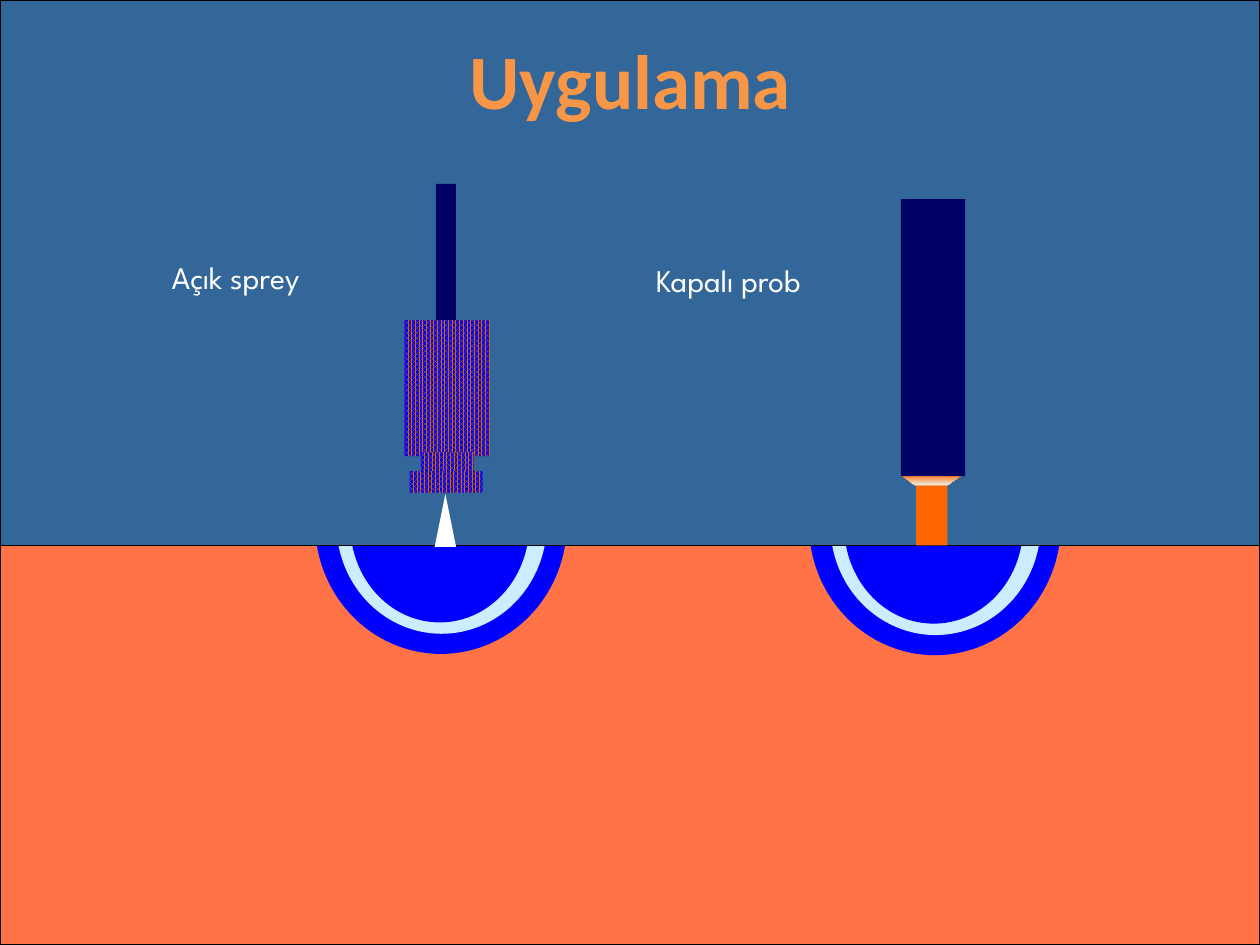
import pptx
import pptx.dml.color
import pptx.enum.dml
import pptx.enum.shapes
import pptx.enum.text
import pptx.util

Inches = pptx.util.Inches
Pt = pptx.util.Pt
RGB = pptx.dml.color.RGBColor.from_string
MSO = pptx.enum.shapes.MSO_SHAPE


class Theme:
    sky, tissue, outline = RGB("336699"), RGB("FF7347"), RGB("000000")
    ice, ice_rim = RGB("0000FF"), RGB("CCECFF")
    navy, white, tip, tip_light = RGB("000066"), RGB("FFFFFF"), RGB("FF6600"), RGB("EEECE1")
    knurl, knurl_back = RGB("CC6600"), RGB("0000FF")
    title, title_font, title_size = RGB("F79646"), "Calibri", Pt(44)
    label, label_font, label_size = RGB("FFFFFF"), "League Spartan", Pt(18)


def add_shape(parent, kind, box, fill=None, line=None):
    """Add a preset shape; without a fill colour it gets the knurled pattern."""
    sp = parent.shapes.add_shape(kind, *map(Inches, box))
    sp.shadow.inherit = False
    if fill is None:
        sp.fill.patterned()
        sp.fill.pattern = pptx.enum.dml.MSO_PATTERN.PERCENT_80
        sp.fill.fore_color.rgb = Theme.knurl
        sp.fill.back_color.rgb = Theme.knurl_back
    else:
        sp.fill.solid()
        sp.fill.fore_color.rgb = fill
    if line is None:
        sp.line.fill.background()
    else:
        sp.line.color.rgb = line
        sp.line.width = Pt(0.75)
    return sp


def write_text(sp, text, font, size, color, bold=False):
    tf = sp.text_frame
    tf.word_wrap = True
    tf.auto_size = pptx.enum.text.MSO_AUTO_SIZE.SHAPE_TO_FIT_TEXT
    tf.vertical_anchor = pptx.enum.text.MSO_ANCHOR.TOP
    p = tf.paragraphs[0]
    p.alignment = pptx.enum.text.PP_ALIGN.CENTER
    r = p.add_run()
    r.text = text
    r.font.name, r.font.size, r.font.bold = font, size, bold
    r.font.color.rgb = color


prs = pptx.Presentation()
prs.slide_width, prs.slide_height = Inches(10), Inches(7.5)
s = prs.slides.add_slide(prs.slide_layouts[5])

# Tissue, with an ice ball under each instrument
add_shape(s, MSO.RECTANGLE, (0, 4.33, 10, 3.17), Theme.tissue, Theme.outline)
for left, top in ((2.5, 3.11), (6.42, 3.12)):
    ball = s.shapes.add_group_shape()
    for dx, dy, w, h, color in (
        (0, 0, 2, 2.08, Theme.ice),
        (0.17, 0.17, 1.67, 1.75, Theme.ice_rim),
        (0.28, 0.28, 1.42, 1.55, Theme.ice),
    ):
        add_shape(ball, MSO.OVAL, (left + dx, top + dy, w, h), color)

# Sky hides the upper half of the ice balls
add_shape(s, MSO.RECTANGLE, (0, 0, 10, 4.33), Theme.sky, Theme.outline)

# Open spray
add_shape(s, MSO.ISOSCELES_TRIANGLE, (3.45, 3.92, 0.17, 0.42), Theme.white)
spray = s.shapes.add_group_shape()
for box, color in (
    ((3.21, 2.54, 0.67, 1.08), None),
    ((3.34, 3.59, 0.42, 0.17), None),
    ((3.46, 1.46, 0.16, 1.08), Theme.navy),
    ((3.25, 3.74, 0.58, 0.17), None),
):
    add_shape(spray, MSO.RECTANGLE, box, color)

# Closed probe: tip, tapered collar, body
probe = s.shapes.add_group_shape()
add_shape(probe, MSO.RECTANGLE, (7.27, 3.83, 0.25, 0.5), Theme.tip)
fb = probe.shapes.build_freeform(Inches(7.14), Inches(3.76))
fb.add_line_segments([(Inches(x), Inches(y)) for x, y in ((7.26, 3.85), (7.52, 3.85), (7.65, 3.76))])
collar = fb.convert_to_shape()
collar.shadow.inherit = False
collar.line.fill.background()
collar.fill.gradient()
collar.fill.gradient_angle = 270
for stop, position, color in zip(collar.fill.gradient_stops, (0, 1), (Theme.tip, Theme.tip_light)):
    stop.position = position
    stop.color.rgb = color
add_shape(probe, MSO.RECTANGLE, (7.15, 1.58, 0.51, 2.2), Theme.navy)

# Labels
for text, box in (
    ("Açık sprey", (1.08, 2, 1.58, 0.4)),
    ("Kapalı prob", (4.75, 2.02, 2.06, 0.4)),
):
    sp = s.shapes.add_textbox(*map(Inches, box))
    write_text(sp, text, Theme.label_font, Theme.label_size, Theme.label)

# Title, brought in front of the sky
title = s.shapes.title
title.left, title.top, title.width, title.height = map(Inches, (3.27, 0.21, 3.47, 0.84))
write_text(title, "Uygulama", Theme.title_font, Theme.title_size, Theme.title, bold=True)
s.shapes._spTree.append(title._element)

prs.save("out.pptx")
